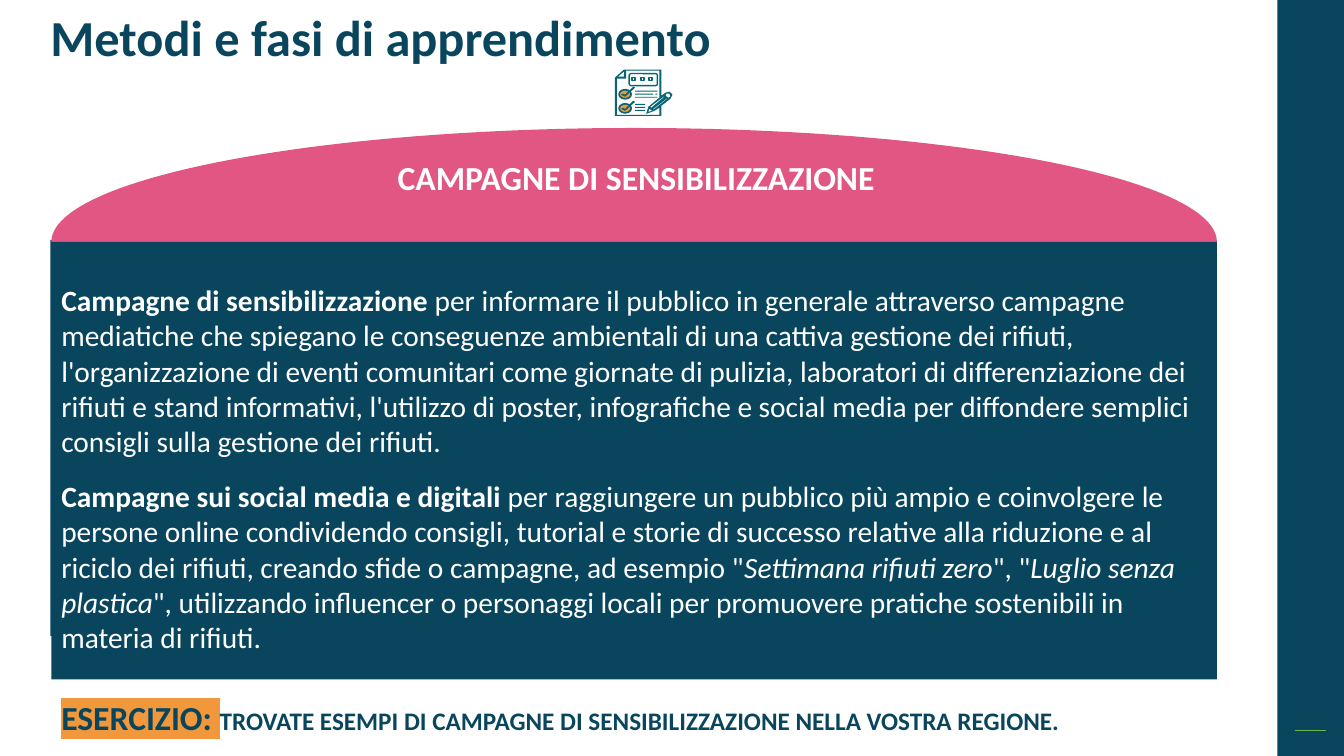
"""Build the slide on awareness campaigns as a learning method."""
import math
from dataclasses import dataclass
from typing import Optional

from lxml import etree
from pptx import Presentation
from pptx import util as u
from pptx.dml.color import RGBColor
from pptx.enum import shapes, text
from pptx.oxml.ns import qn

NAVY, PINK, ORANGE = "09465E", "E25684", "F1983D"
TEAL, GREEN, WHITE = "086575", "60BA47", "FFFFFF"
FONT = "Calibri"
Contour = list[tuple[float, float]]


@dataclass
class Box:
    left: float
    top: float
    width: float
    height: float
    fill: Optional[str] = None
    line: Optional[str] = None
    weight: float = 1
    preset: int = shapes.MSO_SHAPE.RECTANGLE


@dataclass
class Run:
    words: str
    size: float
    color: str
    bold: bool = False
    italic: bool = False
    highlight: Optional[str] = None


def paint(fmt, color: Optional[str]) -> None:
    """Fill with a hex colour, or with nothing."""
    if color is None:
        fmt.background()
    else:
        fmt.solid()
        fmt.fore_color.rgb = RGBColor.from_string(color)


def place(shape, box: Box) -> None:
    """Move and size a shape to a box."""
    shape.left, shape.top = u.Inches(box.left), u.Inches(box.top)
    shape.width, shape.height = u.Inches(box.width), u.Inches(box.height)


def draw_box(slide, box: Box):
    """Draw a preset shape."""
    shape = slide.shapes.add_shape(box.preset, 0, 0, 0, 0)
    place(shape, box)
    shape.shadow.inherit = False
    paint(shape.fill, box.fill)
    paint(shape.line.fill, box.line)
    if box.line:
        shape.line.width = u.Pt(box.weight)
    return shape


def draw_outline(slide, contours: list[Contour], fill: str) -> None:
    """Draw closed contours as one shape; inner contours are holes."""
    points = [[(u.Inches(x), u.Inches(y)) for x, y in c] for c in contours]
    builder = slide.shapes.build_freeform(*points[0][0])
    builder.add_line_segments(points[0][1:], close=True)
    for hole in points[1:]:
        builder.move_to(*hole[0])
        builder.add_line_segments(hole[1:], close=True)
    shape = builder.convert_to_shape()
    shape.shadow.inherit = False
    paint(shape.fill, fill)
    paint(shape.line.fill, None)


def write(frame, paragraphs: list[list[Run]], align=text.PP_ALIGN.LEFT, gap: float = 0) -> None:
    """Write paragraphs run by run, with a gap in points between them."""
    frame.word_wrap = True
    frame.auto_size = text.MSO_AUTO_SIZE.NONE
    for number, runs in enumerate(paragraphs):
        paragraph = frame.add_paragraph() if number else frame.paragraphs[0]
        paragraph.alignment = align
        if number:
            paragraph.space_before = u.Pt(gap)
        for item in runs:
            run = paragraph.add_run()
            run.text = item.words
            font = run.font
            font.name, font.size = FONT, u.Pt(item.size)
            font.bold, font.italic = item.bold, item.italic
            paint(font.fill, item.color)
            if item.highlight:
                mark = etree.Element(qn("a:highlight"))
                etree.SubElement(mark, qn("a:srgbClr")).set("val", item.highlight)
                run.font._element.find(qn("a:solidFill")).addnext(mark)


def draw_label(slide, box: Box, runs: list[Run], align=text.PP_ALIGN.LEFT) -> None:
    """Add a one-paragraph text box."""
    label = slide.shapes.add_textbox(0, 0, 0, 0)
    place(label, box)
    write(label.text_frame, [runs], align)


def draw_sidebar(slide) -> None:
    """Draw the right-hand band with its short rule."""
    draw_box(slide, Box(12.67, 0, 0.66, 7.5, NAVY))
    y = u.Inches(7.25)
    rule = slide.shapes.add_connector(
        shapes.MSO_CONNECTOR.STRAIGHT, u.Inches(12.84), y, u.Inches(13.15), y)
    paint(rule.line.fill, GREEN)
    rule.line.width = u.Pt(1)
    etree.SubElement(rule._element.spPr, qn("a:effectLst"))


def draw_dome(slide) -> None:
    """Draw the upper half of an ellipse above the panel."""
    angles = [math.pi * step / 90 for step in range(91)]
    draw_outline(slide, [[(6.29 - 5.78 * math.cos(a), 2.4 - 1.13 * math.sin(a))
                          for a in angles]], PINK)


def draw_checklist(slide) -> None:
    """Draw the checklist icon with its pencil."""
    sheet = [(6.19, 0.69), (6.56, 0.69), (6.56, 0.95), (6.6, 0.92), (6.64, 0.91), (6.67, 0.94),
             (6.65, 0.98), (6.56, 1.05), (6.56, 1.15), (6.1, 1.15), (6.1, 0.77)]
    page = [(6.54, 0.7), (6.21, 0.7), (6.21, 0.78), (6.12, 0.78), (6.12, 1.14), (6.54, 1.14),
            (6.54, 1.07), (6.49, 1.1), (6.41, 1.13), (6.43, 1.06), (6.54, 0.97)]
    fold = [(6.13, 0.76), (6.19, 0.76), (6.19, 0.71)]
    shaft_top = [(6.58, 0.96), (6.45, 1.06), (6.46, 1.07), (6.59, 0.96)]
    shaft_bottom = [(6.48, 1.09), (6.62, 0.98), (6.61, 0.98), (6.48, 1.08)]
    eraser = [(6.63, 0.97), (6.65, 0.96), (6.64, 0.93), (6.61, 0.93), (6.6, 0.95)]
    tip = [(6.44, 1.08), (6.43, 1.11), (6.47, 1.1)]
    draw_outline(slide, [sheet, page, fold, shaft_top, shaft_bottom, eraser, tip], TEAL)

    draw_box(slide, Box(6.24, 0.73, 0.28, 0.12, None, TEAL, 1, shapes.MSO_SHAPE.ROUNDED_RECTANGLE))
    for column in range(3):
        draw_box(slide, Box(6.27 + 0.085 * column, 0.77, 0.03, 0.03, None, TEAL, 1.2))
    tick = [(6.28, 0.86), (6.3, 0.87), (6.2, 0.96), (6.16, 0.94), (6.18, 0.93), (6.2, 0.94)]
    for drop in (0, 0.14):
        draw_box(slide, Box(6.14, 0.89 + drop, 0.12, 0.09, ORANGE, TEAL, 1.2, shapes.MSO_SHAPE.OVAL))
        draw_outline(slide, [[(x, y + drop) for x, y in tick]], TEAL)
    for left, top, width in [(6.3, 0.9, 0.22), (6.3, 0.93, 0.18), (6.5, 0.93, 0.02), (6.3, 0.96, 0.22),
                             (6.3, 1.03, 0.1), (6.3, 1.06, 0.1), (6.3, 1.09, 0.1)]:
        draw_box(slide, Box(left, top, width, 0.01, TEAL))


def draw_panel(slide) -> None:
    """Draw the navy panel with the two kinds of campaign."""
    def white(words: str, bold: bool = False, italic: bool = False) -> Run:
        """Make a run in the panel's text style."""
        return Run(words, 21, WHITE, bold, italic)

    frame = draw_box(slide, Box(0.51, 2.4, 11.56, 4.34, NAVY)).text_frame
    frame.vertical_anchor = text.MSO_ANCHOR.TOP
    frame.margin_top = u.Inches(0.4)
    write(frame, [
        [white("Campagne di sensibilizzazione ", bold=True),
         white("per informare il pubblico in generale attraverso campagne mediatiche che spiegano le "
               "conseguenze ambientali di una cattiva gestione dei rifiuti, l'organizzazione di eventi "
               "comunitari come giornate di pulizia, laboratori di differenziazione dei rifiuti e stand "
               "informativi, l'utilizzo di poster, infografiche e social media per diffondere semplici "
               "consigli sulla gestione dei rifiuti.")],
        [white("Campagne sui social media e digitali ", bold=True),
         white("per raggiungere un pubblico più ampio e coinvolgere le persone online condividendo "
               "consigli, tutorial e storie di successo relative alla riduzione e al riciclo dei "
               'rifiuti, creando sfide o campagne, ad esempio "'),
         white("Settimana rifiuti zero", italic=True),
         white('", "'),
         white("Luglio senza plastica", italic=True),
         white('", utilizzando influencer o personaggi locali per promuovere pratiche sostenibili '
               "in materia di rifiuti.")],
    ], gap=14)


def main() -> None:
    """Build and save the slide."""
    deck = Presentation()
    deck.slide_width, deck.slide_height = u.Inches(13.33), u.Inches(7.5)
    slide = deck.slides.add_slide(deck.slide_layouts[5])
    draw_sidebar(slide)

    title = slide.shapes.title
    place(title, Box(0.4, 0.11, 8.74, 0.58))
    title.text_frame.vertical_anchor = text.MSO_ANCHOR.MIDDLE
    write(title.text_frame, [[Run("Metodi e fasi di apprendimento", 36, NAVY, True)]])
    title.text_frame.paragraphs[0].line_spacing = 0.9

    draw_box(slide, Box(0.5, 2.38, 11.56, 3.93, NAVY))
    draw_dome(slide)
    draw_label(slide, Box(1.42, 1.51, 9.78, 0.5),
               [Run("CAMPAGNE DI SENSIBILIZZAZIONE", 24, WHITE, True)], text.PP_ALIGN.CENTER)
    draw_panel(slide)
    draw_checklist(slide)
    draw_label(slide, Box(0.51, 6.86, 11.64, 0.5), [
        Run("ESERCIZIO: ", 24, NAVY, True, highlight=ORANGE),
        Run("TROVATE ESEMPI DI CAMPAGNE DI SENSIBILIZZAZIONE NELLA VOSTRA REGIONE.", 18, NAVY, True)])
    deck.save("out.pptx")


if __name__ == "__main__":
    main()
